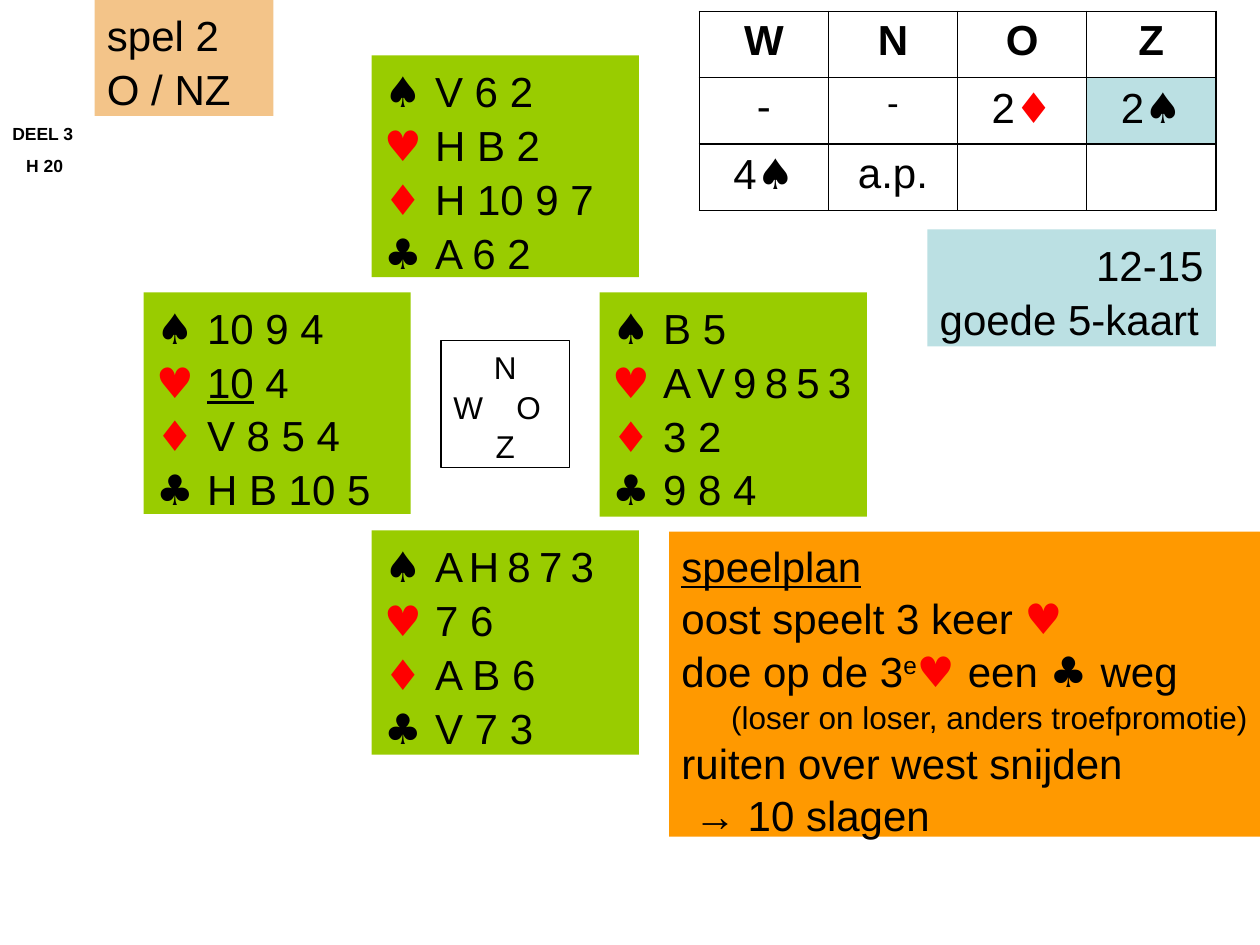
import pptx
import pptx.dml.color
import pptx.enum.shapes
import pptx.enum.text
import pptx.oxml.ns
import pptx.util
from lxml import etree

Inches = pptx.util.Inches
Pt = pptx.util.Pt
RGBColor = pptx.dml.color.RGBColor
Align = pptx.enum.text.PP_ALIGN

BLACK = RGBColor(0x00, 0x00, 0x00)
RED = RGBColor(0xFF, 0x00, 0x00)
SAND = RGBColor(0xF3, 0xC4, 0x89)
ORANGE = RGBColor(0xFF, 0x99, 0x00)
GREEN = RGBColor(0x99, 0xCC, 0x00)
PALE_BLUE = RGBColor(0xBB, 0xE0, 0xE3)


def add_xml(parent, tag, **attributes):
    return etree.SubElement(parent, pptx.oxml.ns.qn(tag), attributes)


def styled(text, **text_format):
    return text, text_format


def suit(text):
    return styled(text, font="DejaVu Sans", color=RED if text[0] in "♥♦" else BLACK)


def line(*runs, **layout):
    return [styled(run) if isinstance(run, str) else run for run in runs], layout


def hand(spades, hearts, diamonds, clubs):
    holdings = zip("♠♥♦♣", (spades, hearts, diamonds, clubs))
    return [line(suit(symbol + " "), *cards) for symbol, cards in holdings]


class BridgeSlide:
    font = "Arial"
    size = 24

    def __init__(self, presentation):
        self.slide = presentation.slides.add_slide(presentation.slide_layouts[6])

    def add_run(self, paragraph, text, size=None, font=None, color=BLACK, bold=False,
                underline=False, spacing=0, raised=0):
        run = paragraph.add_run()
        run.text = text
        run.font.size = Pt(size or self.size)
        run.font.name = font or self.font
        run.font.color.rgb = color
        run.font.bold = bold
        run.font.underline = underline
        properties = run.font._element
        if spacing:
            properties.set("spc", str(spacing * 100))
        if raised:
            properties.set("baseline", str(raised * 1000))

    def add_lines(self, frame, lines, gap=0, **defaults):
        for index, (runs, layout) in enumerate(lines):
            paragraph = frame.add_paragraph() if index else frame.paragraphs[0]
            properties = paragraph._p.get_or_add_pPr()
            properties.set("marL", str(Inches(layout.get("indent", 0))))
            properties.set("indent", "0")
            if "tab" in layout:
                tabs = add_xml(properties, "a:tabLst")
                add_xml(tabs, "a:tab", pos=str(Inches(layout["tab"])), algn="l")
            paragraph.alignment = layout.get("align", Align.LEFT)
            if index:
                paragraph.space_before = Pt(gap)
            for text, text_format in runs:
                self.add_run(paragraph, text, **{**defaults, **text_format})

    def set_frame(self, frame, gap):
        frame.word_wrap = True
        frame.vertical_anchor = pptx.enum.text.MSO_ANCHOR.TOP
        frame.margin_left = frame.margin_right = Inches(0.1)
        frame.margin_top = Inches(0.05) + Pt(gap)
        frame.margin_bottom = Inches(0.05)

    def box(self, left, top, width, height, lines, fill=None, gap=2, **defaults):
        shape = self.slide.shapes.add_shape(
            pptx.enum.shapes.MSO_SHAPE.RECTANGLE,
            Inches(left), Inches(top), Inches(width), Inches(height))
        shape.shadow.inherit = False
        if fill is None:
            shape.fill.background()
            shape.line.color.rgb = BLACK
            shape.line.width = Pt(0.75)
        else:
            shape.fill.solid()
            shape.fill.fore_color.rgb = fill
            shape.line.fill.background()
        self.set_frame(shape.text_frame, gap)
        self.add_lines(shape.text_frame, lines, gap, **defaults)

    def label(self, left, top, width, height, lines, gap, **defaults):
        frame = self.slide.shapes.add_textbox(
            Inches(left), Inches(top), Inches(width), Inches(height)).text_frame
        self.set_frame(frame, gap)
        self.add_lines(frame, lines, gap, **defaults)

    def border(self, cell):
        properties = cell._tc.get_or_add_tcPr()
        for side in ("a:lnL", "a:lnR", "a:lnT", "a:lnB"):
            edge = add_xml(properties, side, w=str(Pt(1)))
            add_xml(add_xml(edge, "a:solidFill"), "a:srgbClr", val=str(BLACK))

    def auction(self, left, top, width, height, rows, fills):
        table = self.slide.shapes.add_table(
            len(rows), len(rows[0]), Inches(left), Inches(top),
            Inches(width), Inches(height)).table
        table.first_row = table.horz_banding = False
        for row_index, row in enumerate(rows):
            for column_index, runs in enumerate(row):
                cell = table.cell(row_index, column_index)
                self.border(cell)
                fill = fills.get((row_index, column_index))
                if fill is None:
                    cell.fill.background()
                else:
                    cell.fill.solid()
                    cell.fill.fore_color.rgb = fill
                self.add_lines(cell.text_frame, [line(*runs, align=Align.CENTER)],
                               bold=row_index == 0)


def main():
    presentation = pptx.Presentation()
    presentation.slide_width = Inches(10)
    presentation.slide_height = Inches(7.5)
    deal = BridgeSlide(presentation)

    deal.box(0.75, 0, 1.42, 0.92, [line("spel 2"), line("O / NZ")], SAND)
    deal.box(5.31, 4.22, 4.69, 2.42, [
        line(styled("speelplan", underline=True)),
        line("oost speelt 3 keer ", suit("♥")),
        line("doe op de 3", styled("e", raised=30), suit("♥ "), "een ", suit("♣ "), "weg"),
        line(styled("(loser on loser, anders troefpromotie)", size=18), align=Align.RIGHT),
        line("ruiten over west snijden"),
        line("→ 10 slagen", indent=0.1),
    ], ORANGE, gap=1.2)
    deal.box(3.5, 2.7, 1.02, 1.01, [
        line("N", align=Align.CENTER),
        line("W\tO", tab=0.58),
        line("Z", align=Align.CENTER),
    ], gap=1, size=18)

    north = hand(["V 6 2"], ["H B 2"], ["H 10 9 7"], ["A 6 2"])
    east = hand(["B 5"], [styled("A V 9 8 5 3", spacing=-1)], ["3 2"], ["9 8 4"])
    west = hand(["10 9 4"], [styled("10", underline=True), " 4"], ["V 8 5 4"], ["H B 10 5"])
    south = hand([styled("A H 8 7 3", spacing=-1)], ["7 6"], ["A B 6"], ["V 7 3"])
    for left, top, height, cards in (
            (2.95, 0.44, 1.76, north), (4.76, 2.32, 1.78, east),
            (1.14, 2.32, 1.76, west), (2.95, 4.21, 1.78, south)):
        deal.box(left, top, 2.12, height, cards, GREEN)

    deal.auction(5.55, 0.09, 4.1, 1.58, [
        [["W"], ["N"], ["O"], ["Z"]],
        [["-"], [styled("-", size=20)], ["2", suit("♦")], ["2", suit("♠")]],
        [["4", suit("♠")], ["a.p."], [], []],
    ], {(1, 3): PALE_BLUE})
    deal.label(0, 0.84, 0.75, 0.52, [line("DEEL 3"), line("H 20", indent=0.11)],
               gap=6.2, size=10, bold=True)
    deal.box(7.36, 1.82, 2.29, 0.93,
             [line("12-15", align=Align.RIGHT), line("goede 5-kaart")], PALE_BLUE)

    presentation.save("out.pptx")


if __name__ == "__main__":
    main()
